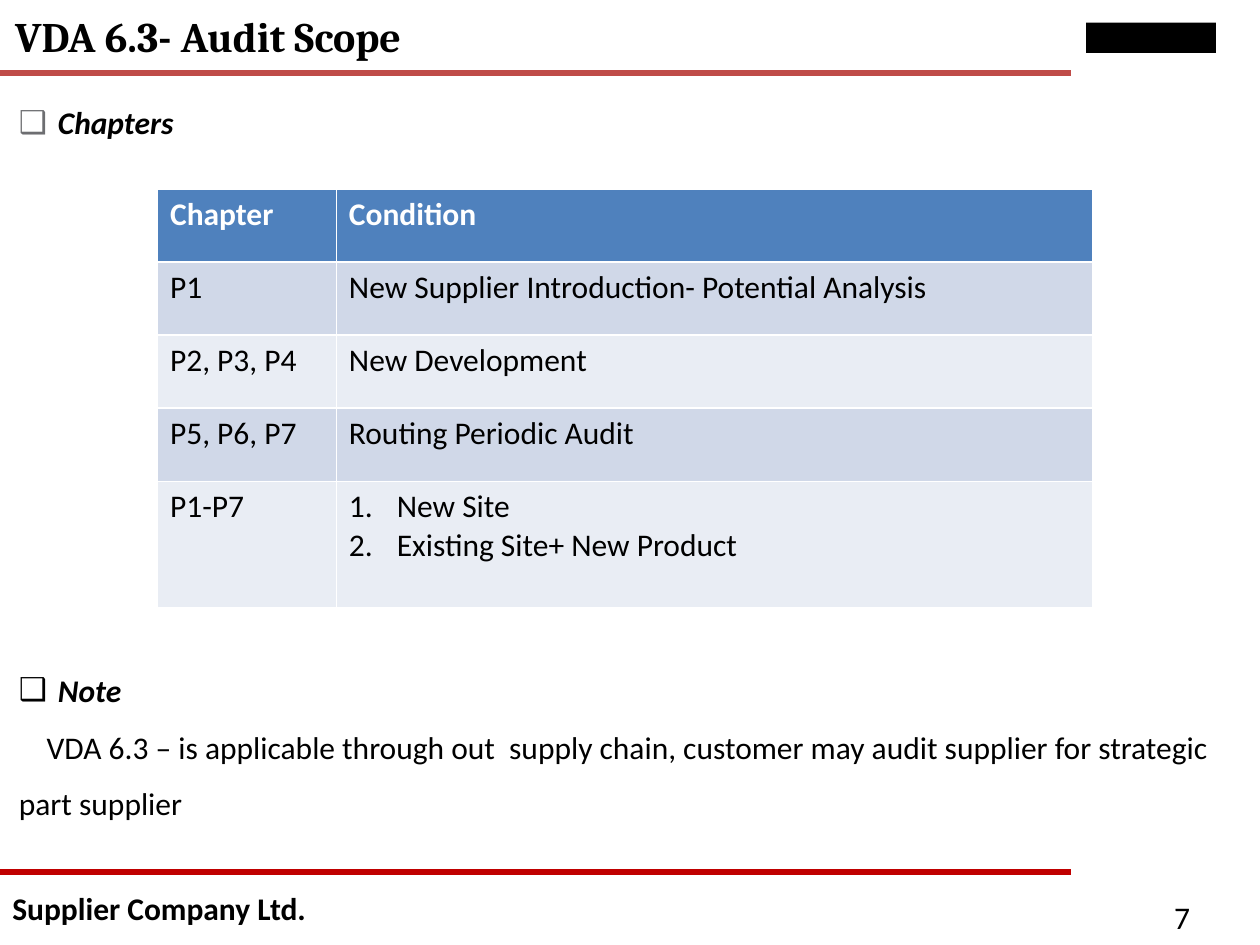
from dataclasses import dataclass

from lxml.etree import SubElement
from pptx import Presentation
from pptx.dml.color import RGBColor
from pptx.enum.shapes import MSO_CONNECTOR, MSO_SHAPE
from pptx.enum.text import MSO_ANCHOR, PP_ALIGN
from pptx.oxml.ns import qn
from pptx.util import Inches, Pt

BLACK = "000000"
WHITE = "FFFFFF"
HEADER_FILL = "4F81BD"
BAND_FILLS = ("D0D8E8", "E9EDF4")
COLUMN_WIDTHS = (1.42, 6)
ROW_HEIGHTS = (0.58, 0.58, 0.58, 0.58, 1)


@dataclass
class Rule:
    top: float
    color: str


@dataclass
class Label:
    text: str
    left: float
    top: float
    width: float
    height: float
    bold: bool = False


@dataclass
class BodyLine:
    text: str
    margin: float
    indent: float
    heading: bool = False
    bullet_color: str = BLACK
    space_before: float = 0


RULES = (Rule(0.58, "BF4C48"), Rule(6.92, "C00000"))
LABELS = (
    Label("Supplier Company Ltd.", 0, 7.08, 2.83, 0.25, bold=True),
    Label("7", 9.22, 7.08, 0.77, 0.4),
)
BODY_LINES = (
    BodyLine("Chapters", 0.31, -0.31, heading=True, bullet_color="6D6E71"),
    BodyLine("Note", 0.31, -0.31, heading=True, space_before=292),
    BodyLine("VDA 6.3 – is applicable through out  supply chain, customer may "
             "audit supplier for strategic part supplier", 0, 0.22),
)
TABLE_ROWS = (
    ("Chapter", ["Condition"]),
    ("P1", ["New Supplier Introduction- Potential Analysis"]),
    ("P2, P3, P4", ["New Development"]),
    ("P5, P6, P7", ["Routing Periodic Audit"]),
    ("P1-P7", ["New Site", "Existing Site+ New Product"]),
)


def rgb(color: str) -> RGBColor:
    return RGBColor.from_string(color)


def set_font(para, size=18, name="Calibri", color=BLACK, bold=False, italic=False) -> None:
    font = para.font
    font.size, font.name, font.bold, font.italic = Pt(size), name, bold, italic
    font.color.rgb = rgb(color)


def set_indent(para, margin: float, indent: float):
    """Set the indents and return the paragraph properties for bullets."""
    properties = para._p.get_or_add_pPr()
    properties.set("marL", str(Inches(margin)))
    properties.set("indent", str(Inches(indent)))
    return properties


def place(shape, left: float, top: float, width: float, height: float) -> None:
    """Move a placeholder and clear its margins."""
    shape.left, shape.top = Inches(left), Inches(top)
    shape.width, shape.height = Inches(width), Inches(height)
    frame = shape.text_frame
    frame.margin_left = frame.margin_right = frame.margin_top = frame.margin_bottom = 0
    frame.vertical_anchor = MSO_ANCHOR.TOP
    frame.word_wrap = True


def draw_rule(page, rule: Rule) -> None:
    line = page.shapes.add_connector(
        MSO_CONNECTOR.STRAIGHT, 0, Inches(rule.top), Inches(8.5), Inches(rule.top))
    line.line.color.rgb = rgb(rule.color)
    line.line.width = Pt(3)
    SubElement(line._element.spPr, qn("a:effectLst"))


def draw_label(page, label: Label) -> None:
    box = page.shapes.add_textbox(Inches(label.left), Inches(label.top),
                                  Inches(label.width), Inches(label.height))
    frame = box.text_frame
    frame.word_wrap = True
    frame.vertical_anchor = MSO_ANCHOR.MIDDLE
    frame.text = label.text
    set_font(frame.paragraphs[0], bold=label.bold)


def draw_logo_block(page) -> None:
    block = page.shapes.add_shape(MSO_SHAPE.RECTANGLE, Inches(8.62), Inches(0.18),
                                  Inches(1.03), Inches(0.24))
    block.shadow.inherit = False
    block.fill.solid()
    block.fill.fore_color.rgb = rgb(BLACK)
    block.line.fill.background()


def fill_title(title) -> None:
    place(title, 0.12, 0.08, 8.4, 0.4)
    title.text_frame.text = "VDA 6.3- Audit Scope"
    para = title.text_frame.paragraphs[0]
    para.alignment = PP_ALIGN.LEFT
    set_font(para, size=24, name="Cambria", bold=True)


def fill_body(body) -> None:
    place(body, 0.15, 0.67, 9.5, 6.1)
    frame = body.text_frame
    frame.text = "\n".join(line.text for line in BODY_LINES)
    for para, line in zip(frame.paragraphs, BODY_LINES):
        properties = set_indent(para, line.margin, line.indent)
        if line.heading:
            bullet_color = SubElement(properties, qn("a:buClr"))
            SubElement(bullet_color, qn("a:srgbClr"), val=line.bullet_color)
            SubElement(properties, qn("a:buFont"), typeface="Arial")
            SubElement(properties, qn("a:buChar"), char="❑")
        else:
            SubElement(properties, qn("a:buNone"))
        para.line_spacing = 1.5
        para.space_before = Pt(line.space_before)
        set_font(para, bold=line.heading, italic=line.heading)


def fill_cell(cell, lines: list[str], fill: str, header: bool) -> None:
    cell.fill.solid()
    cell.fill.fore_color.rgb = rgb(fill)
    cell.text_frame.text = "\n".join(lines)
    for para in cell.text_frame.paragraphs:
        if len(lines) > 1:
            properties = set_indent(para, 0.38, -0.38)
            SubElement(properties, qn("a:buAutoNum"), type="arabicPeriod")
        set_font(para, color=WHITE if header else BLACK, bold=header)


def draw_table(page) -> None:
    table = page.shapes.add_table(
        len(TABLE_ROWS), len(COLUMN_WIDTHS), Inches(1.25), Inches(1.5),
        Inches(sum(COLUMN_WIDTHS)), Inches(sum(ROW_HEIGHTS))).table
    for column, width in zip(table.columns, COLUMN_WIDTHS):
        column.width = Inches(width)
    for index, (chapter, conditions) in enumerate(TABLE_ROWS):
        header = index == 0
        fill = HEADER_FILL if header else BAND_FILLS[(index - 1) % 2]
        table.rows[index].height = Inches(ROW_HEIGHTS[index])
        fill_cell(table.cell(index, 0), [chapter], fill, header)
        fill_cell(table.cell(index, 1), conditions, fill, header)


def main() -> None:
    deck = Presentation()
    deck.slide_width, deck.slide_height = Inches(10), Inches(7.5)
    page = deck.slides.add_slide(deck.slide_layouts[1])
    for rule in RULES:
        draw_rule(page, rule)
    for label in LABELS:
        draw_label(page, label)
    draw_logo_block(page)
    fill_title(page.shapes.title)
    fill_body(page.placeholders[1])
    draw_table(page)
    deck.save("out.pptx")


if __name__ == "__main__":
    main()
